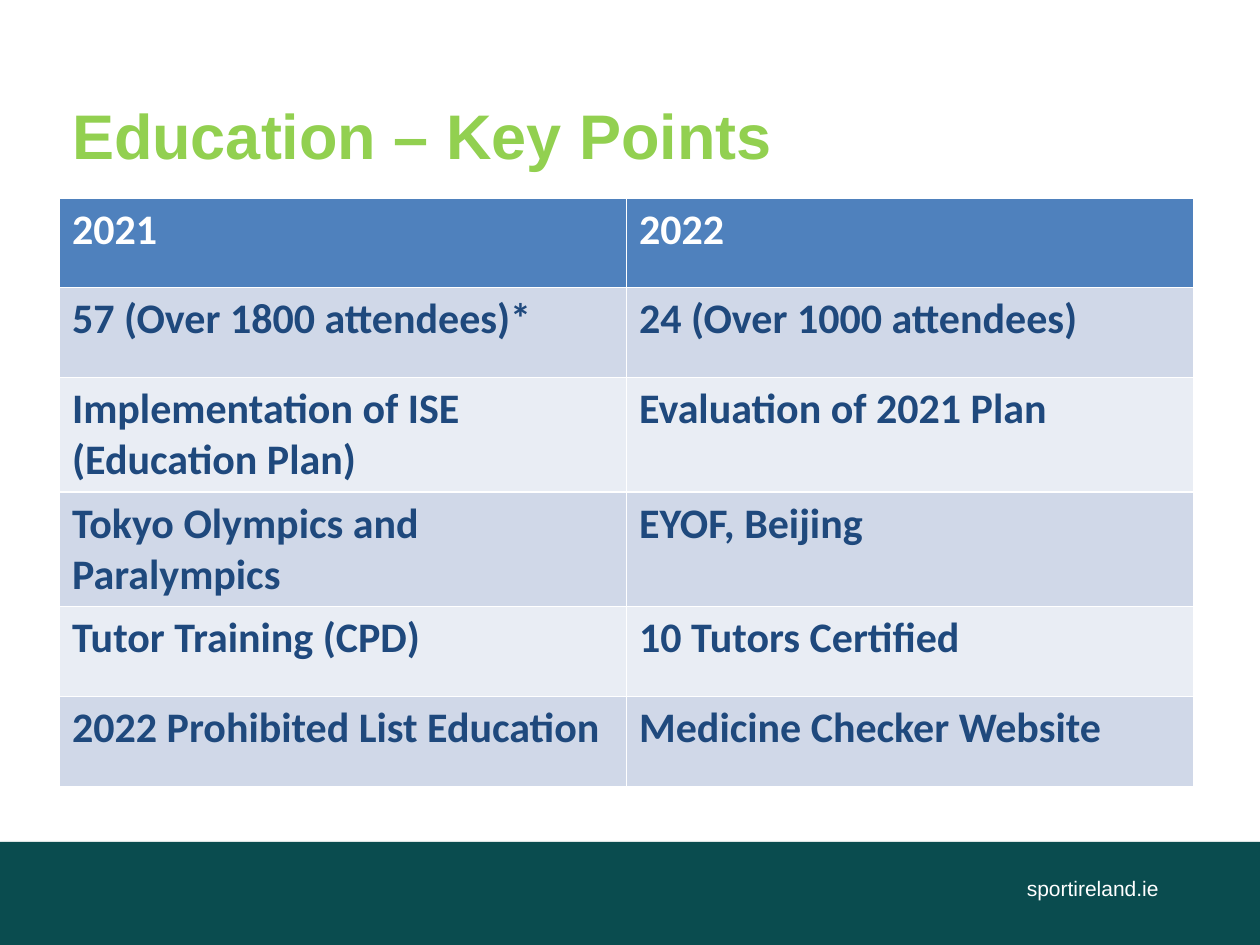
from pptx import Presentation
from pptx.dml.color import RGBColor
from pptx.enum.shapes import MSO_SHAPE
from pptx.enum.text import MSO_ANCHOR, PP_ALIGN
from pptx.util import Cm, Pt

WHITE = RGBColor(0xFF, 0xFF, 0xFF)
TEAL = RGBColor(0x0A, 0x4C, 0x4F)
GREEN = RGBColor(0x92, 0xD0, 0x50)
NAVY = RGBColor(0x1F, 0x49, 0x7D)
HEADER_BLUE = RGBColor(0x4F, 0x81, 0xBD)
BAND_DARK = RGBColor(0xD0, 0xD8, 0xE8)
BAND_LIGHT = RGBColor(0xE9, 0xED, 0xF4)

TITLE_FORMAT = {"name": "Arial", "size": Pt(36), "bold": True}
FOOTER_FORMAT = {"name": "Arial", "size": Pt(12)}
CELL_FORMAT = {"name": "Calibri", "size": Pt(24), "bold": True}

KEY_POINTS = [
    ("2021", "2022"),
    ("57 (Over 1800 attendees)*", "24 (Over 1000 attendees)"),
    ("Implementation of ISE (Education Plan)", "Evaluation of 2021 Plan"),
    ("Tokyo Olympics and Paralympics", "EYOF, Beijing"),
    ("Tutor Training (CPD)", "10 Tutors Certified"),
    ("2022 Prohibited List Education", "Medicine Checker Website"),
]
ROW_HEIGHTS = [1.81, 1.81, 2.31, 2.31, 1.81, 1.81]
COLUMN_WIDTH = 11.43


def write_text(frame, text, font_format, color):
    para = frame.paragraphs[0]
    span = para.add_run()
    span.text = text
    for name, value in font_format.items():
        setattr(span.font, name, value)
    span.font.color.rgb = color
    return para


def add_footer(page):
    band = page.shapes.add_shape(
        MSO_SHAPE.RECTANGLE, Cm(0), Cm(16.97), Cm(25.4), Cm(2.08))
    band.fill.solid()
    band.fill.fore_color.rgb = TEAL
    band.line.fill.background()
    box = page.shapes.add_textbox(Cm(20.45), Cm(17.53), Cm(4.27), Cm(1.02))
    box.text_frame.word_wrap = True
    write_text(box.text_frame, "sportireland.ie", FOOTER_FORMAT, WHITE)


def format_title(page, text):
    title = page.shapes.title
    place = {"left": Cm(1.2), "top": Cm(1.7), "width": Cm(23.22), "height": Cm(2.29)}
    for name, value in place.items():
        setattr(title, name, value)
    frame = title.text_frame
    frame.vertical_anchor = MSO_ANCHOR.TOP
    frame.margin_top = Cm(0.25)
    para = write_text(frame, text, TITLE_FORMAT, GREEN)
    para.alignment = PP_ALIGN.LEFT


def add_key_points(page):
    table = page.shapes.add_table(
        len(KEY_POINTS), 2, Cm(1.2), Cm(3.99),
        Cm(2 * COLUMN_WIDTH), Cm(sum(ROW_HEIGHTS))).table
    for column in table.columns:
        column.width = Cm(COLUMN_WIDTH)
    for index, (texts, height) in enumerate(zip(KEY_POINTS, ROW_HEIGHTS)):
        row = table.rows[index]
        row.height = Cm(height)
        band = BAND_DARK if index % 2 else BAND_LIGHT
        fill, color = (band, NAVY) if index else (HEADER_BLUE, WHITE)
        for cell, text in zip(row.cells, texts):
            cell.fill.solid()
            cell.fill.fore_color.rgb = fill
            write_text(cell.text_frame, text, CELL_FORMAT, color)


def main():
    deck = Presentation()
    deck.slide_width, deck.slide_height = Cm(25.4), Cm(19.05)
    page = deck.slides.add_slide(deck.slide_layouts[5])
    add_footer(page)
    format_title(page, "Education – Key Points")
    add_key_points(page)
    deck.save("out.pptx")


if __name__ == "__main__":
    main()
